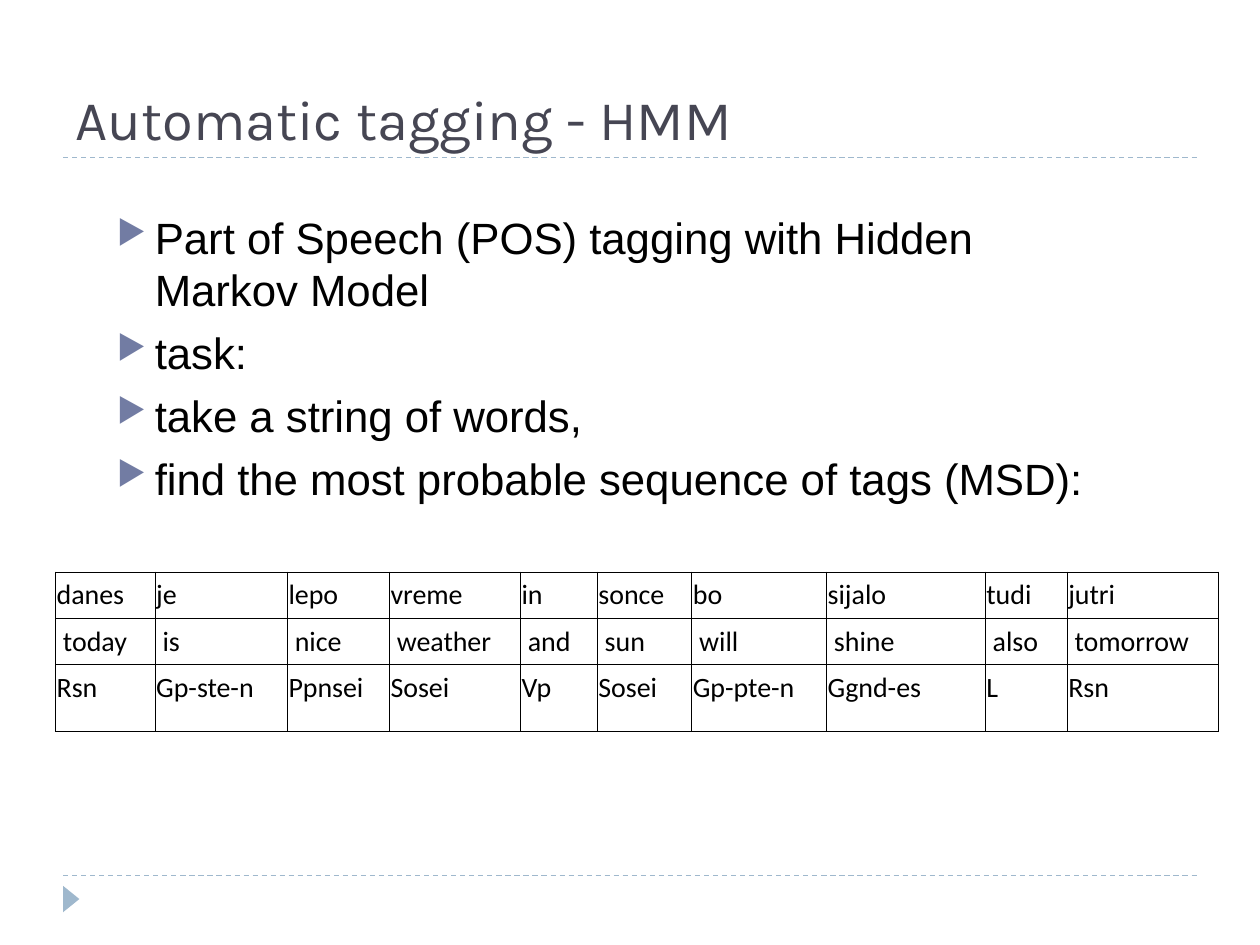
from lxml.etree import SubElement
from pptx import Presentation
from pptx.dml.color import RGBColor
from pptx.enum.dml import MSO_LINE
from pptx.enum.shapes import MSO_CONNECTOR, MSO_SHAPE
from pptx.enum.text import MSO_ANCHOR
from pptx.oxml.ns import qn
from pptx.util import Inches, Pt

WIDTH, HEIGHT = 10, 7.5
BLACK, ACCENT, BULLET, TITLE = "000000", "9FB8CD", "727CA3", "464653"
POINTS = [
    "Part of Speech (POS) tagging with Hidden Markov Model",
    "task:",
    "take a string of words,",
    "find the most probable sequence of tags (MSD):",
]
TAGGED_WORDS = [
    ["danes", "je", "lepo", "vreme", "in", "sonce", "bo", "sijalo", "tudi", "jutri"],
    [" today", " is", " nice", " weather", " and", " sun", " will", " shine", " also", " tomorrow"],
    ["Rsn", "Gp-ste-n", "Ppnsei", "Sosei", "Vp", "Sosei", "Gp-pte-n", "Ggnd-es", "L", "Rsn"],
]
COLUMN_SHARES = [7.9, 10.5, 8.1, 10.4, 6.1, 7.5, 10.7, 12.6, 6.5, 12]
ROW_SHARES = [3.6, 3.6, 7.07]


def across(share):
    return Inches(WIDTH * share / 100)


def down(share):
    return Inches(HEIGHT * share / 100)


def area(left, top, width, height):
    return across(left), down(top), across(width), down(height)


def color(value):
    return RGBColor.from_string(value)


def write(para, text, *, font, size, ink=BLACK):
    span = para.add_run()
    span.text = text
    span.font.name = font
    span.font.size = Pt(size)
    span.font.color.rgb = color(ink)


def add_bullet(para):
    para.space_before = Pt(6)
    properties = para._p.get_or_add_pPr()
    properties.set("marL", str(Inches(0.3)))
    properties.set("indent", str(-Inches(0.3)))
    tint = SubElement(properties, qn("a:buClr"))
    SubElement(tint, qn("a:srgbClr"), val=BULLET)
    SubElement(properties, qn("a:buSzPct"), val="76000")
    SubElement(properties, qn("a:buChar"), char="▶")


def add_text(page, place, lines, *, bulleted=False, anchor=MSO_ANCHOR.TOP, **style):
    frame = page.shapes.add_textbox(*area(*place)).text_frame
    frame.word_wrap = True
    frame.vertical_anchor = anchor
    for index, line in enumerate(lines):
        para = frame.add_paragraph() if index else frame.paragraphs[0]
        if bulleted:
            add_bullet(para)
        write(para, line, **style)


def add_rule(page, top):
    rule = page.shapes.add_connector(
        MSO_CONNECTOR.STRAIGHT, across(5), down(top), across(95), down(top)
    )
    rule.line.color.rgb = color(ACCENT)
    rule.line.width = Pt(0.75)
    rule.line.dash_style = MSO_LINE.DASH
    SubElement(rule._element.spPr, qn("a:effectLst"))


def add_marker(page):
    marker = page.shapes.add_shape(
        MSO_SHAPE.ISOSCELES_TRIANGLE, *area(4.6, 94.27, 2.1, 1.73)
    )
    marker.rotation = 90
    marker.shadow.inherit = False
    marker.fill.solid()
    marker.fill.fore_color.rgb = color(ACCENT)
    marker.line.fill.background()


def add_borders(cell):
    properties = cell._tc.get_or_add_tcPr()
    for side in ("lnL", "lnR", "lnT", "lnB"):
        border = SubElement(properties, qn(f"a:{side}"), w=str(Pt(0.5)))
        fill = SubElement(border, qn("a:solidFill"))
        SubElement(fill, qn("a:srgbClr"), val=BLACK)


def fill_cell(cell, text):
    cell.margin_left = cell.margin_right = Inches(0.01)
    cell.margin_top = cell.margin_bottom = Inches(0.05)
    add_borders(cell)
    cell.fill.background()
    write(cell.text_frame.paragraphs[0], text, font="Calibri", size=16)


def add_word_table(page):
    place = area(4.4, 60.53, sum(COLUMN_SHARES), sum(ROW_SHARES))
    table = page.shapes.add_table(len(ROW_SHARES), len(COLUMN_SHARES), *place).table
    table.first_row = table.horz_banding = False
    for column, share in zip(table.columns, COLUMN_SHARES):
        column.width = across(share)
    for row, share, words in zip(table.rows, ROW_SHARES, TAGGED_WORDS):
        row.height = down(share)
        for cell, word in zip(row.cells, words):
            fill_cell(cell, word)


def main():
    deck = Presentation()
    deck.slide_width, deck.slide_height = Inches(WIDTH), Inches(HEIGHT)
    page = deck.slides.add_slide(deck.slide_layouts[6])
    for top in (92.67, 16.67):
        add_rule(page, top)
    add_marker(page)
    add_text(page, (5, 2.27, 90, 14.4), ["Automatic tagging - HMM"],
             anchor=MSO_ANCHOR.BOTTOM, font="Karla", size=32, ink=TITLE)
    add_text(page, (8.3, 21.6, 79.5, 69.33), POINTS,
             bulleted=True, font="Arial", size=25)
    add_word_table(page)
    deck.save("out.pptx")


if __name__ == "__main__":
    main()
